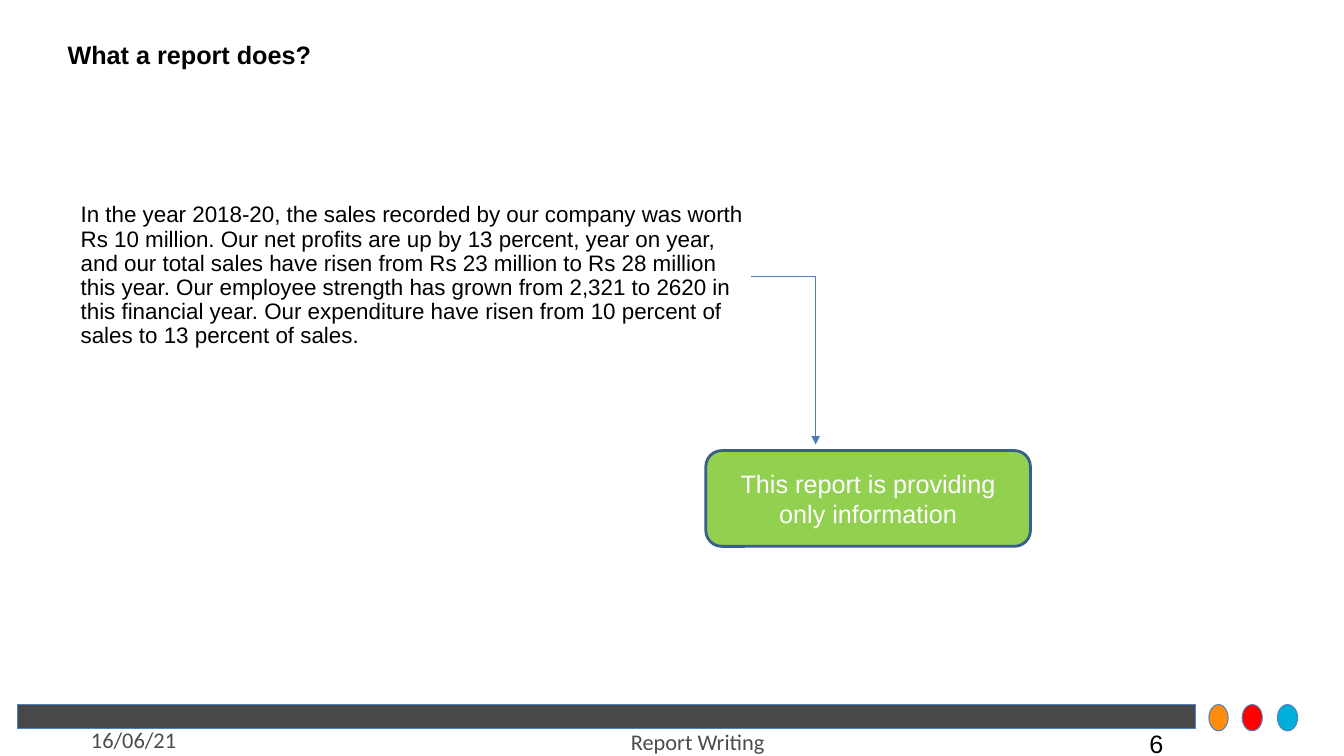
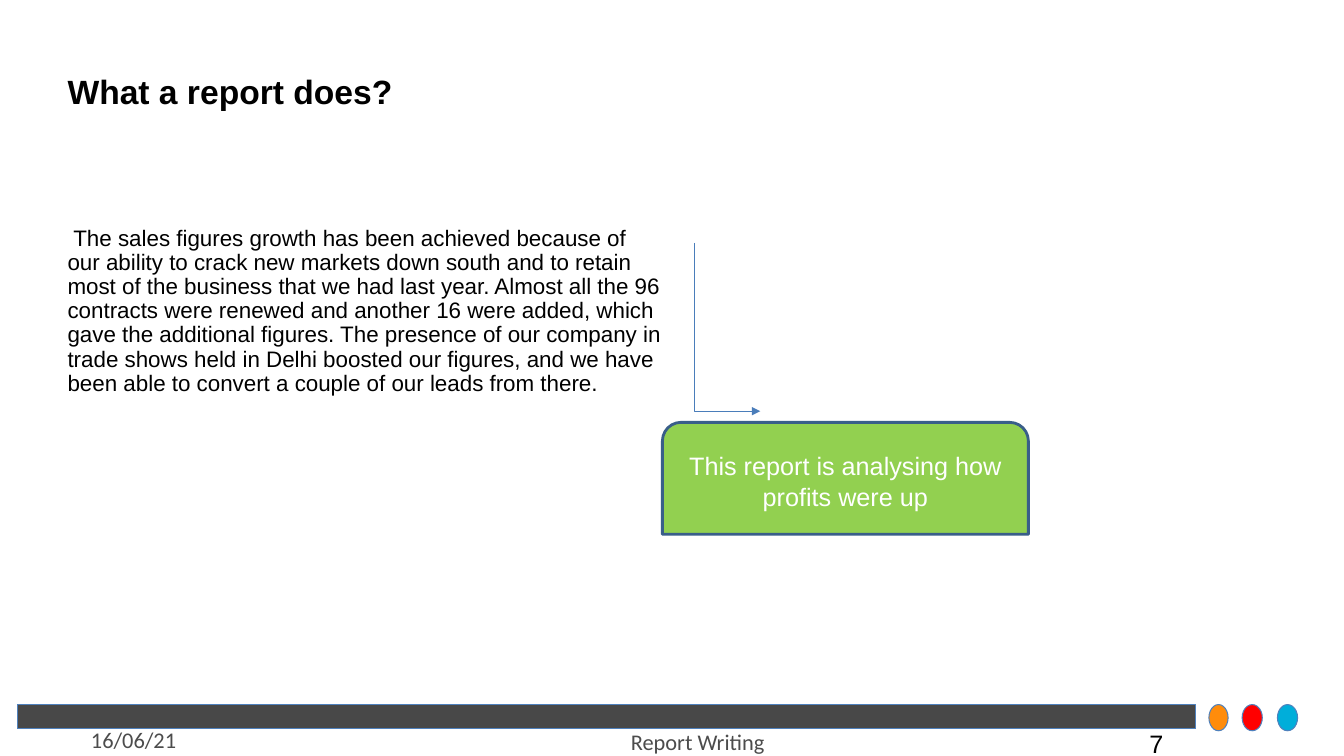
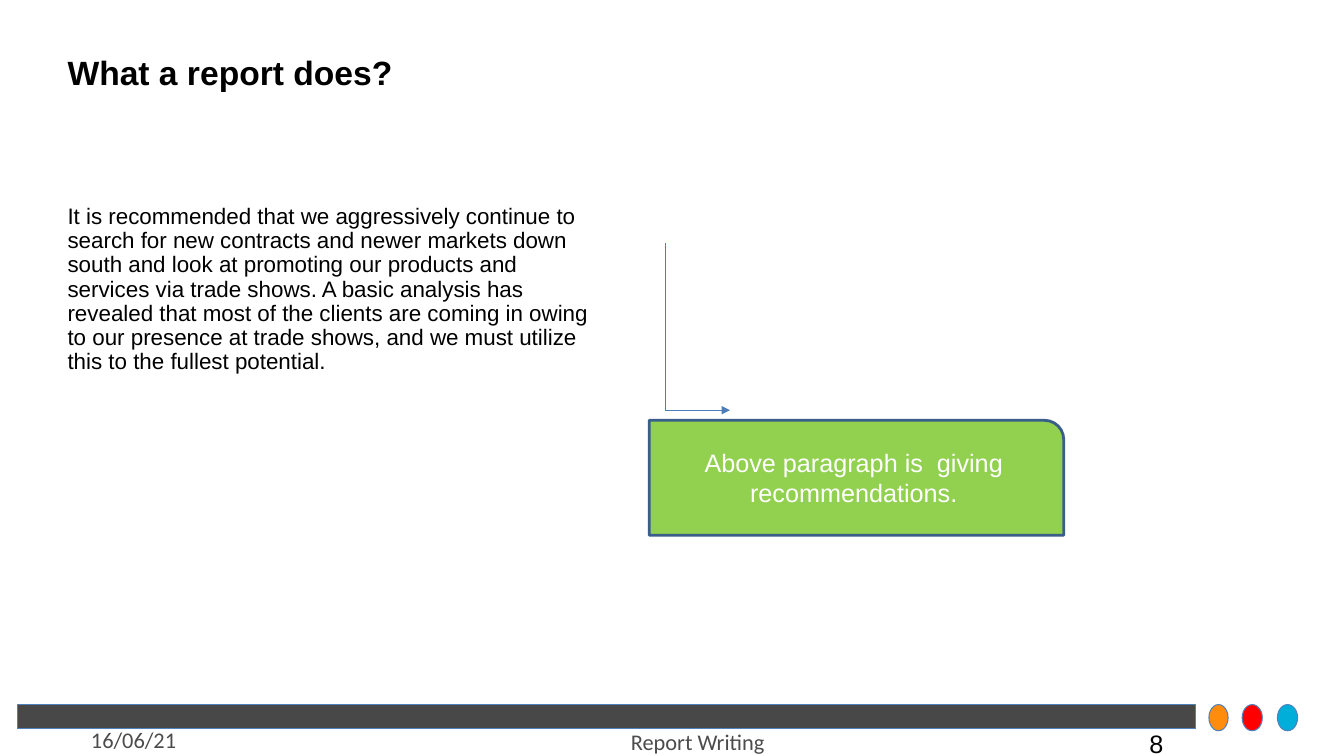
from lxml import etree
from pptx import Presentation
from pptx.dml.color import RGBColor
from pptx.enum import shapes, text
from pptx.oxml import ns
from pptx.util import Inches, Pt

BLACK = RGBColor(0, 0, 0)
WHITE = RGBColor(255, 255, 255)
BAND = RGBColor(0x48, 0x48, 0x48)
FOOTER_GREY = RGBColor(0x4C, 0x4C, 0x4C)
EDGE = RGBColor(0x4F, 0x81, 0xBD)
ARROW = RGBColor(0x4A, 0x7D, 0xBA)
GREEN = RGBColor(0x92, 0xD0, 0x50)
GREEN_EDGE = RGBColor(0x39, 0x5E, 0x89)
ORANGE = RGBColor(0xFF, 0x8C, 0x0B)
RED = RGBColor(0xFF, 0, 0)
CYAN = RGBColor(0, 0xAE, 0xDA)

WIDTH, HEIGHT = 13.33, 7.5
MARGIN, TITLE_TOP = 0.67, 0.3
BAND_TOP = 6.99
FIRST_PAGE = 6
TITLE = "What a report does?"
PRESET = shapes.MSO_SHAPE

BAND_PARTS = [
    (PRESET.RECTANGLE, (0.17, BAND_TOP, 11.69, 0.24), BAND),
    (PRESET.OVAL, (11.99, BAND_TOP, 0.19, 0.26), ORANGE),
    (PRESET.OVAL, (12.32, BAND_TOP, 0.2, 0.26), RED),
    (PRESET.OVAL, (12.67, BAND_TOP, 0.2, 0.26), CYAN),
]

PAGES = [
    {
        "title_height": 0.52, "title_size": 18,
        "report": "In the year 2018-20, the sales recorded by our company was worth "
                  "Rs 10 million. Our net profits are up by 13 percent, year on year, "
                  "and our total sales have risen from Rs 23 million to Rs 28 million "
                  "this year. Our employee strength has grown from 2,321 to 2620 in "
                  "this financial year. Our expenditure have risen from 10 percent of "
                  "sales to 13 percent of sales.",
        "report_box": (0.8, 1.88, 6.65, 1.72),
        "verdict": "This report is providing only information",
        "verdict_preset": PRESET.ROUNDED_RECTANGLE,
        "verdict_box": (7, 4.47, 3.22, 0.95),
        "arrow": (7.45, 2.74, 8.09, 4.41), "down_first": False,
    },
    {
        "title_height": 1.25, "title_size": 24,
        "report": " The sales figures growth has been achieved because of our ability "
                  "to crack new markets down south and to retain most of the business "
                  "that we had last year. Almost all the 96 contracts were renewed and "
                  "another 16 were added, which gave the additional figures. The "
                  "presence of our company in trade shows held in Delhi boosted our "
                  "figures, and we have been able to convert a couple of our leads "
                  "from there.",
        "report_box": (MARGIN, 1.75, 5.9, 2.68),
        "verdict": "This report is analysing how profits were up",
        "verdict_preset": PRESET.ROUND_2_SAME_RECTANGLE,
        "verdict_box": (6.57, 4.19, 3.63, 1.11),
        "arrow": (6.89, 2.41, 7.54, 4.08), "down_first": True,
    },
    {
        "title_height": 0.88, "title_size": 24,
        "report": "It is recommended that we aggressively continue to search for new "
                  "contracts and newer markets down south and look at promoting our "
                  "products and services via trade shows. A basic analysis has revealed "
                  "that most of the clients are coming in owing to our presence at "
                  "trade shows, and we must utilize this to the fullest potential.",
        "report_box": (MARGIN, 1.75, 5.27, 2.25),
        "verdict": "Above paragraph is  giving recommendations.",
        "verdict_preset": PRESET.ROUND_1_RECTANGLE,
        "verdict_box": (6.44, 4.17, 4.11, 1.14),
        "arrow": (6.6, 2.41, 7.24, 4.07), "down_first": True,
    },
]


def inches(values):
    return [Inches(value) for value in values]


def write(shape, words, size, color, font="Arial", align=text.PP_ALIGN.LEFT,
          bold=False, bulleted=True):
    frame = shape.text_frame
    frame.word_wrap = True
    frame.text = words
    paragraph = frame.paragraphs[0]
    if not bulleted:
        remove_bullet(paragraph)
    paragraph.alignment = align
    paragraph.font.name = font
    paragraph.font.size = Pt(size)
    paragraph.font.bold = bold
    paragraph.font.color.rgb = color
    return paragraph


def remove_bullet(paragraph):
    properties = paragraph._p.get_or_add_pPr()
    properties.set("marL", "0")
    properties.set("indent", "0")
    etree.SubElement(properties, ns.qn("a:buNone"))


def fill_placeholder(holder, box, words, size, bold=False):
    holder.left, holder.top, holder.width, holder.height = inches(box)
    frame = holder.text_frame
    frame.margin_left = frame.margin_right = frame.margin_top = frame.margin_bottom = 0
    frame.vertical_anchor = text.MSO_ANCHOR.MIDDLE
    frame.auto_size = text.MSO_AUTO_SIZE.NONE
    paragraph = write(holder, words, size, BLACK, bold=bold, bulleted=False)
    paragraph.line_spacing = 0.9
    paragraph.space_before = Pt(0)


def add_block(slide, preset, box, fill, edge, edge_width):
    block = slide.shapes.add_shape(preset, *inches(box))
    block.shadow.inherit = False
    block.fill.solid()
    block.fill.fore_color.rgb = fill
    block.line.color.rgb = edge
    block.line.width = Pt(edge_width)
    return block


def add_bent_arrow(slide, ends, down_first):
    """One-corner arrow; going down first is a mirrored quarter turn."""
    x1, y1, x2, y2 = ends
    if down_first:
        mid_x, mid_y = (x1 + x2) / 2, (y1 + y2) / 2
        half_w, half_h = (y2 - y1) / 2, (x2 - x1) / 2
        x1, x2 = mid_x + half_w, mid_x - half_w
        y1, y2 = mid_y - half_h, mid_y + half_h
    arrow = slide.shapes.add_connector(shapes.MSO_CONNECTOR.ELBOW, *inches((x1, y1, x2, y2)))
    arrow.line.color.rgb = ARROW
    arrow.line.width = Pt(0.75)
    properties = arrow._element.spPr
    properties.find(ns.qn("a:prstGeom")).set("prst", "bentConnector2")
    if down_first:
        properties.find(ns.qn("a:xfrm")).set("rot", str(270 * 60000))
    etree.SubElement(properties.find(ns.qn("a:ln")), ns.qn("a:tailEnd"), type="triangle")
    etree.SubElement(properties, ns.qn("a:effectLst"))


def add_band_to_master(deck, slide):
    """Draw the bottom band and dots, then move them to the master."""
    tree = deck.slide_master.shapes._spTree
    for number, (preset, box, fill) in enumerate(BAND_PARTS, 20):
        part = add_block(slide, preset, box, fill, EDGE, 0.75)._element
        part.nvSpPr.cNvPr.set("id", str(number))
        tree.append(part)


def add_footer(slide, page_number):
    center, left = text.PP_ALIGN.CENTER, text.PP_ALIGN.LEFT
    for words, box, size, color, font, align in [
        ("Report Writing", (4.54, 7.17, 4.76, 0.4), 16, FOOTER_GREY, "Calibri", center),
        ("16/06/21", (0, 7.15, 2.65, 0.26), 16, FOOTER_GREY, "Calibri", center),
        (str(page_number), (11.3, 7.18, 0.61, 0.4), 18, BLACK, "Arial", left),
    ]:
        write(slide.shapes.add_textbox(*inches(box)), words, size, color, font, align)


def add_page(deck, page, page_number):
    slide = deck.slides.add_slide(deck.slide_layouts.get_by_name("Title and Content"))
    title_box = (MARGIN, TITLE_TOP, WIDTH - 2 * MARGIN, page["title_height"])
    fill_placeholder(slide.shapes.title, title_box, TITLE, page["title_size"], bold=True)
    fill_placeholder(slide.placeholders[1], page["report_box"], page["report"], 16)
    verdict = add_block(slide, page["verdict_preset"], page["verdict_box"], GREEN, GREEN_EDGE, 2)
    verdict.text_frame.vertical_anchor = text.MSO_ANCHOR.MIDDLE
    write(verdict, page["verdict"], 18, WHITE, align=text.PP_ALIGN.CENTER)
    add_bent_arrow(slide, page["arrow"], page["down_first"])
    add_footer(slide, page_number)
    return slide


def main():
    deck = Presentation()
    deck.slide_width, deck.slide_height = inches((WIDTH, HEIGHT))
    slides = [add_page(deck, page, number) for number, page in enumerate(PAGES, FIRST_PAGE)]
    add_band_to_master(deck, slides[0])
    deck.save("out.pptx")


if __name__ == "__main__":
    main()
